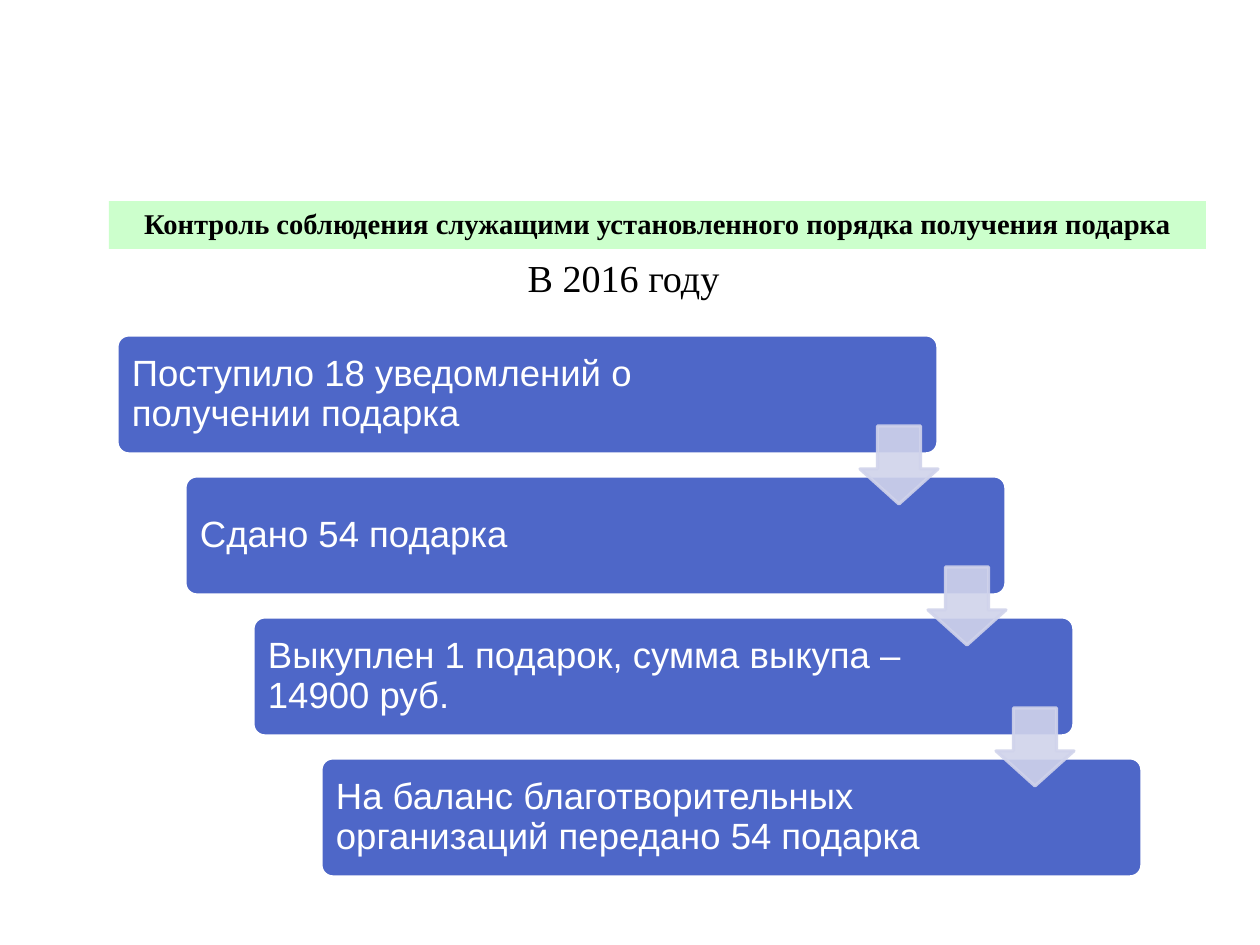
from lxml import etree
from pptx import Presentation
from pptx.dml.color import RGBColor
from pptx.enum import shapes, text
from pptx.oxml import ns
from pptx.util import Pt

TITLE = "Контроль соблюдения служащими установленного порядка получения подарка"
YEAR = "В 2016 году"
STEPS = [
    "Поступило 18 уведомлений о получении подарка",
    "Сдано 54 подарка",
    "Выкуплен 1 подарок, сумма выкупа – \v14900 руб.",
    "На баланс благотворительных организаций передано 54 подарка",
]

GREEN = RGBColor(0xCC, 0xFF, 0xCC)
BLUE = RGBColor(0x4E, 0x67, 0xC8)
PALE = RGBColor(0xD0, 0xD3, 0xEB)
WHITE = RGBColor(0xFF, 0xFF, 0xFF)
BLACK = RGBColor(0, 0, 0)

PX = 8000  # EMU in one px
LEFT, TOP, WIDE, HIGH = 117, 335, 821, 119
SHIFT, DROP = 68, 141
ARROW, DOWN = 78, 91
EDGE, SPAN = 4, 668
KIND = shapes.MSO_SHAPE
ALIGN = text.PP_ALIGN


def emu(*sizes):
    return [size * PX for size in sizes]


def write(slide, place, words, font, size, color, align, pads,
          gap=0.9, bold=False):
    box = slide.shapes.add_textbox(*emu(*place))
    frame = box.text_frame
    frame.word_wrap = True
    frame.vertical_anchor = text.MSO_ANCHOR.MIDDLE
    frame.margin_left = frame.margin_right = pads[0] * PX
    frame.margin_top = frame.margin_bottom = pads[1] * PX
    frame.text = words
    par = frame.paragraphs[0]
    par.alignment = align
    par.line_spacing = gap
    par.font.name = font
    par.font.size = Pt(size)
    par.font.bold = bold
    par.font.color.rgb = color
    return box


def draw(slide, kind, place, fill, line, adjust):
    shape = slide.shapes.add_shape(kind, *emu(*place))
    shape.shadow.inherit = False
    shape.fill.solid()
    shape.fill.fore_color.rgb = fill
    shape.line.color.rgb = line
    shape.line.width = Pt(2)
    for i, value in enumerate(adjust):
        shape.adjustments[i] = value
    return shape


def fade(shape, percent):
    """Set the opacity of a shape's fill and line."""
    for color in shape.element.spPr.iter(ns.qn("a:srgbClr")):
        etree.SubElement(color, ns.qn("a:alpha"), val=str(percent * 1000))


def main():
    deck = Presentation()
    deck.slide_width, deck.slide_height = emu(1260, 945)
    slide = deck.slides.add_slide(deck.slide_layouts[6])

    head = write(slide, (109, 201, 1097, 48), TITLE, "Times New Roman", 18,
                 BLACK, ALIGN.CENTER, (0, 0), bold=True)
    head.fill.solid()
    head.fill.fore_color.rgb = GREEN

    spots = [(LEFT + i * SHIFT, TOP + i * DROP) for i in range(len(STEPS))]
    for (x, y), words in zip(spots, STEPS):
        draw(slide, KIND.ROUNDED_RECTANGLE, (x, y, WIDE, HIGH),
             BLUE, WHITE, [0.1])
        place = (x + EDGE, y + EDGE, SPAN, HIGH - 2 * EDGE)
        write(slide, place, words, "Arial", 23, WHITE, ALIGN.LEFT, (11, 11))

    for x, y in spots[:-1]:
        place = (x + WIDE - ARROW, y + DOWN, ARROW, ARROW)
        fade(draw(slide, KIND.DOWN_ARROW, place, PALE, PALE, [0.55, 0.45]), 90)

    write(slide, (358, 255, 531, 51), YEAR, "Times New Roman", 24,
          BLACK, ALIGN.CENTER, (11, 6), gap=0.87)

    deck.save("out.pptx")


if __name__ == "__main__":
    main()
